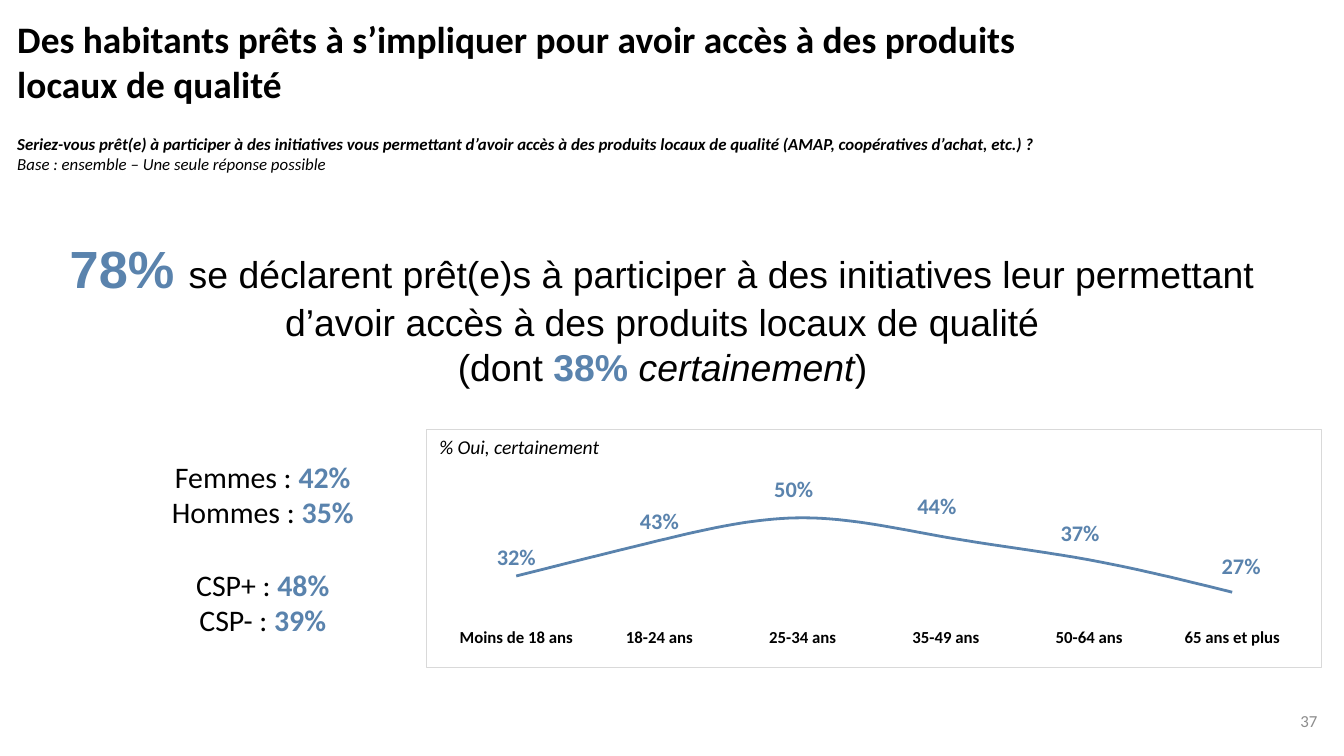
from lxml import etree
from pptx import Presentation
from pptx.chart import data as cd
from pptx.dml.color import RGBColor
from pptx.enum import chart as ch, text
from pptx.oxml import ns, parse_xml
from pptx.util import Inches, Pt

THEME = {
    "ink": "000000", "accent": "5A83AD", "muted": "8C8C8C", "border": "D9D9D9",
    "body": "Calibri", "display": "Arial",
    "title": 20, "hero": 28, "profile": 16, "value": 12, "caption": 10.5, "small": 9,
}
KEY = {"color": "accent", "bold": True}

TITLE = [["Des habitants prêts à s’impliquer pour avoir accès à des produits"],
         ["locaux de qualité"]]
QUESTION = [
    [("Seriez-vous prêt(e) à participer à des initiatives vous permettant d’avoir accès "
      "à des produits locaux de qualité (AMAP, coopératives d’achat, etc.) ?", {"bold": True})],
    ["Base : ensemble – Une seule réponse possible"],
]
HEADLINE = [
    [("78% ", {**KEY, "size": "hero"}),
     "se déclarent prêt(e)s à participer à des initiatives leur permettant "
     "d’avoir accès à des produits locaux de qualité"],
    ["(dont ", ("38% ", KEY), ("certainement", {"italic": True}), ")"],
]
PROFILES = [("Femmes", "42%"), ("Hommes", "35%"), ("CSP+", "48%"), ("CSP-", "39%")]
AGES = [
    ("Moins de 18 ans", 0.32, None),
    ("18-24 ans", 0.43, None),
    ("25-34 ans", 0.50, (-0.01, -0.04)),
    ("35-49 ans", 0.44, (-0.01, -0.05)),
    ("50-64 ans", 0.37, (-0.01, -0.03)),
    ("65 ans et plus", 0.27, (0.01, -0.03)),
]
CHART_BOX = (3.17, 3.19, 6.67, 1.78)
PLOT_BOX = {"x": 0.02, "y": 0.1, "w": 0.96, "h": 0.68}


def style(font, size, color="ink", face="body", bold=False, italic=False):
    font.name = THEME[face]
    font.size = Pt(THEME[size])
    font.color.rgb = RGBColor.from_string(THEME[color])
    font.bold = bold
    font.italic = italic


def add_text(s, box, paragraphs, align="LEFT", anchor="TOP", gaps=None, **fmt):
    sp = s.shapes.add_textbox(*map(Inches, box))
    tf = sp.text_frame
    tf.word_wrap = True
    tf.vertical_anchor = text.MSO_ANCHOR[anchor]
    for i, runs in enumerate(paragraphs):
        p = tf.paragraphs[0] if i == 0 else tf.add_paragraph()
        p.alignment = text.PP_ALIGN[align]
        if gaps and i in gaps:
            p.space_before = Pt(gaps[i])
        for run in runs:
            words, extra = (run, {}) if isinstance(run, str) else run
            r = p.add_run()
            r.text = words
            style(r.font, **{**fmt, **extra})
    return sp


def manual_layout(inner=False, **values):
    layout = etree.Element(ns.qn("c:layout"))
    manual = etree.SubElement(layout, ns.qn("c:manualLayout"))
    if inner:
        etree.SubElement(manual, ns.qn("c:layoutTarget"), val="inner")
        for axis in "xy":
            etree.SubElement(manual, ns.qn(f"c:{axis}Mode"), val="edge")
    for name, value in values.items():
        etree.SubElement(manual, ns.qn(f"c:{name}"), val=str(value))
    return layout


def add_age_chart(s):
    data = cd.CategoryChartData(number_format="0%")
    data.categories = [age for age, _, _ in AGES]
    data.add_series("Oui, certainement", [share for _, share, _ in AGES])
    chart = s.shapes.add_chart(ch.XL_CHART_TYPE.LINE, *map(Inches, CHART_BOX), data).chart
    chart.has_title = False
    chart.has_legend = False
    style(chart.font, "value")

    cat = chart.category_axis
    cat.format.line.fill.background()
    cat.has_major_gridlines = False
    cat.major_tick_mark = ch.XL_TICK_MARK.OUTSIDE
    style(cat.tick_labels.font, "small", bold=True)
    val = chart.value_axis
    val.visible = False
    val.has_major_gridlines = False
    val.minimum_scale, val.maximum_scale = 0.2, 0.7

    plot = chart.plots[0]
    plot.vary_by_categories = False
    series = plot.series[0]
    series.smooth = True
    series.marker.style = ch.XL_MARKER_STYLE.NONE
    series.format.line.color.rgb = RGBColor.from_string(THEME["accent"])
    series.format.line.width = Pt(1.5)

    labels = series.data_labels
    labels.show_value = True
    labels.number_format = "0%"
    labels.number_format_is_linked = False
    labels.position = ch.XL_LABEL_POSITION.ABOVE
    style(labels.font, "value", **KEY)
    for i, (_, _, shift) in enumerate(AGES):
        if shift:
            label = series.points[i].data_label
            style(label.font, "value", **KEY)
            label.position = ch.XL_LABEL_POSITION.ABOVE
            idx = series._element.xpath(f".//c:dLbl/c:idx[@val='{i}']")[0]
            idx.addnext(manual_layout(x=shift[0], y=shift[1]))
    for leader in series._element.xpath(".//c:showLeaderLines"):
        leader.set("val", "0")

    root = chart._chartSpace
    area = root.xpath("c:chart/c:plotArea")[0]
    for old in area.xpath("c:layout"):
        area.remove(old)
    area.insert(0, manual_layout(inner=True, **PLOT_BOX))
    root.xpath("c:chart")[0].addnext(parse_xml(
        f'<c:spPr {ns.nsdecls("c", "a")}><a:noFill/><a:ln w="{Pt(0.75)}"><a:solidFill>'
        f'<a:srgbClr val="{THEME["border"]}"/></a:solidFill></a:ln></c:spPr>'))


def main():
    prs = Presentation()
    prs.slide_width = Inches(10)
    prs.slide_height = prs.slide_width * 9 // 16
    s = prs.slides.add_slide(prs.slide_layouts[6])
    add_text(s, (0.03, 0.94, 8.58, 0.41), QUESTION, anchor="MIDDLE", size="small", italic=True)
    add_text(s, (0.03, 0.07, 8.72, 0.77), TITLE, size="title", bold=True)
    add_text(s, (0.18, 1.71, 9.5, 1.25), HEADLINE, align="CENTER", size="title", face="display")
    add_text(s, (7.65, 5.21, 2.25, 0.3), [["37"]], align="RIGHT", anchor="MIDDLE",
             size="small", color="muted")
    add_text(s, (0.73, 3.36, 2.45, 1.45), [[f"{who} : ", (share, KEY)] for who, share in PROFILES],
             align="CENTER", gaps={2: 19.5}, size="profile")
    add_age_chart(s)
    add_text(s, (*CHART_BOX[:2], 1.59, 0.28), [["% Oui, certainement"]], size="caption", italic=True)
    prs.save("out.pptx")


if __name__ == "__main__":
    main()
